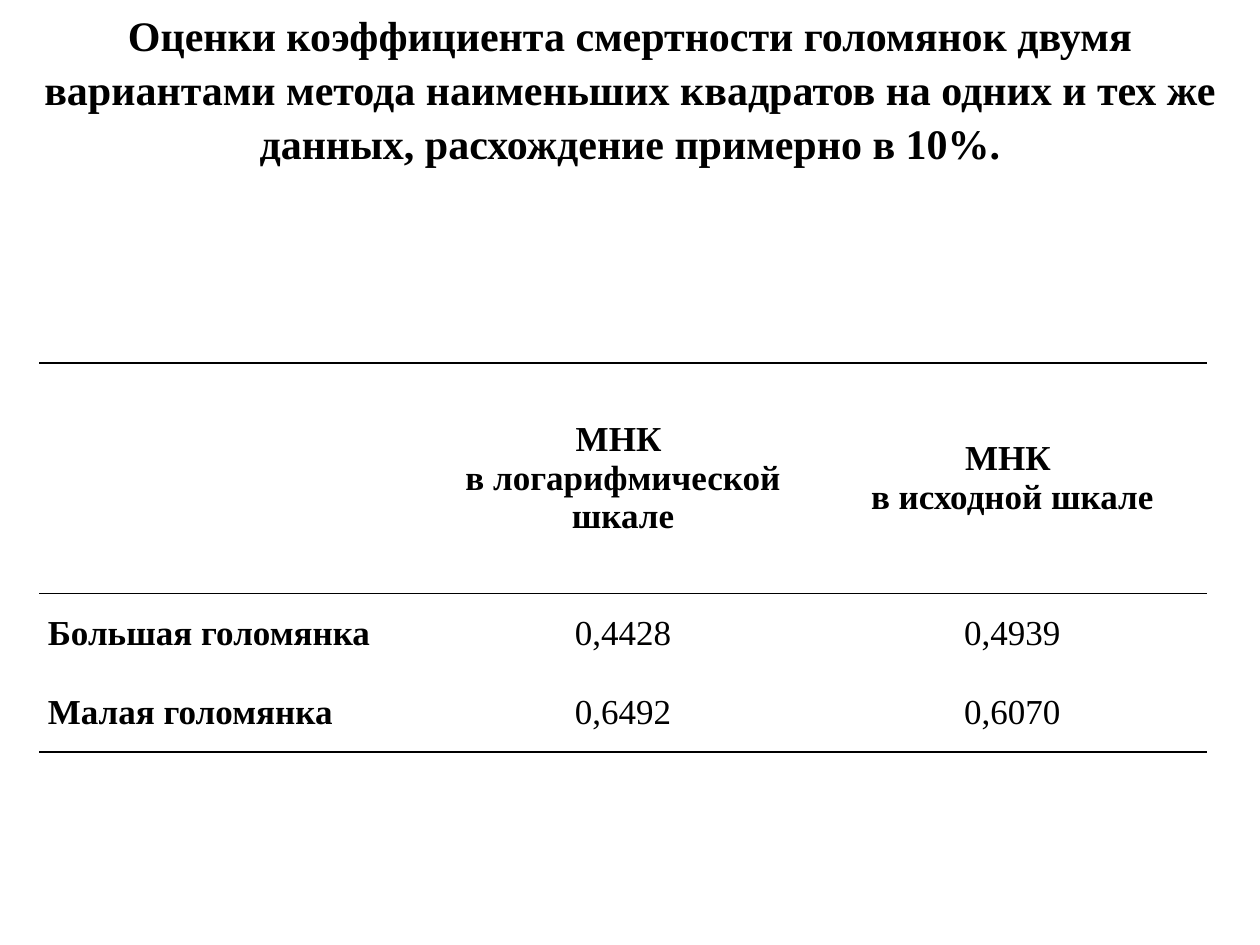
from lxml import etree
from pptx import Presentation
from pptx.dml.color import RGBColor
from pptx.enum.text import MSO_ANCHOR, PP_ALIGN
from pptx.oxml.ns import qn
from pptx.util import Inches, Pt

CENTER, JUSTIFY = PP_ALIGN.CENTER, PP_ALIGN.JUSTIFY
MIDDLE = MSO_ANCHOR.MIDDLE
COLORS = {"ink": "000000", "paper": "FFFFFF"}
FONT = "Times New Roman"

# Content
TITLE = ("Оценки коэффициента смертности голомянок двумя вариантами метода "
         "наименьших квадратов на одних и тех же данных, расхождение примерно в 10%.")
ESTIMATES = [
    ["", "МНК \nв логарифмической шкале", "МНК \nв исходной шкале"],
    ["Большая голомянка", "0,4428", "0,4939"],
    ["Малая голомянка", "0,6492", "0,6070"],
]

# Layout, in inches
SLIDE_W, SLIDE_H = 10, 7.5
TABLE_LEFT, TABLE_TOP = 0.31, 2.88
COLUMN_W = 3.09
ROW_HEIGHTS = [1.83, 0.63, 0.63]


def write(frame, text, size=20, bold=False, align=CENTER, spacing=None):
    frame.word_wrap = True
    for i, line in enumerate(text.split("\n")):
        paragraph = frame.paragraphs[0] if i == 0 else frame.add_paragraph()
        paragraph.alignment = align
        if spacing:
            paragraph.line_spacing = spacing
        if not line:
            continue
        run = paragraph.add_run()
        run.text = line
        run.font.name = FONT
        run.font.size = Pt(size)
        run.font.bold = bold
        run.font.color.rgb = RGBColor.from_string(COLORS["ink"])


def set_borders(cell, ruled):
    """Rule the named sides (T, B) of a cell and clear the others."""
    properties = cell._tc.get_or_add_tcPr()
    for position, side in enumerate("LRTB"):
        line = etree.Element(qn(f"a:ln{side}"), w=str(Pt(1)))
        if side in ruled:
            fill = etree.SubElement(line, qn("a:solidFill"))
            etree.SubElement(fill, qn("a:srgbClr"), val=COLORS["ink"])
        else:
            etree.SubElement(line, qn("a:noFill"))
        properties.insert(position, line)


prs = Presentation()
prs.slide_width, prs.slide_height = Inches(SLIDE_W), Inches(SLIDE_H)
slide = prs.slides.add_slide(prs.slide_layouts[6])
slide.background.fill.solid()
slide.background.fill.fore_color.rgb = RGBColor.from_string(COLORS["paper"])

# Title
title = slide.shapes.add_textbox(0, 0, Inches(SLIDE_W), Inches(1.31))
write(title.text_frame, TITLE, size=24, bold=True, spacing=1.07)

# Table of estimates
column_count = len(ESTIMATES[0])
table = slide.shapes.add_table(
    len(ESTIMATES), column_count, Inches(TABLE_LEFT), Inches(TABLE_TOP),
    Inches(COLUMN_W * column_count), Inches(sum(ROW_HEIGHTS))).table
table.first_row = table.horz_banding = False
for column in table.columns:
    column.width = Inches(COLUMN_W)

for r, (estimates, height) in enumerate(zip(ESTIMATES, ROW_HEIGHTS)):
    table.rows[r].height = Inches(height)
    # Rules run around the header, and below the last row
    ruled = {0: "TB", 1: "T", len(ESTIMATES) - 1: "B"}.get(r, "")
    for c, text in enumerate(estimates):
        cell = table.cell(r, c)
        cell.fill.background()
        cell.vertical_anchor = MIDDLE
        cell.margin_left = cell.margin_right = Inches(0.07)
        cell.margin_top = cell.margin_bottom = 0
        write(cell.text_frame, text, bold=r == 0 or c == 0,
              align=JUSTIFY if c == 0 else CENTER)
        set_borders(cell, ruled)

prs.save("out.pptx")
